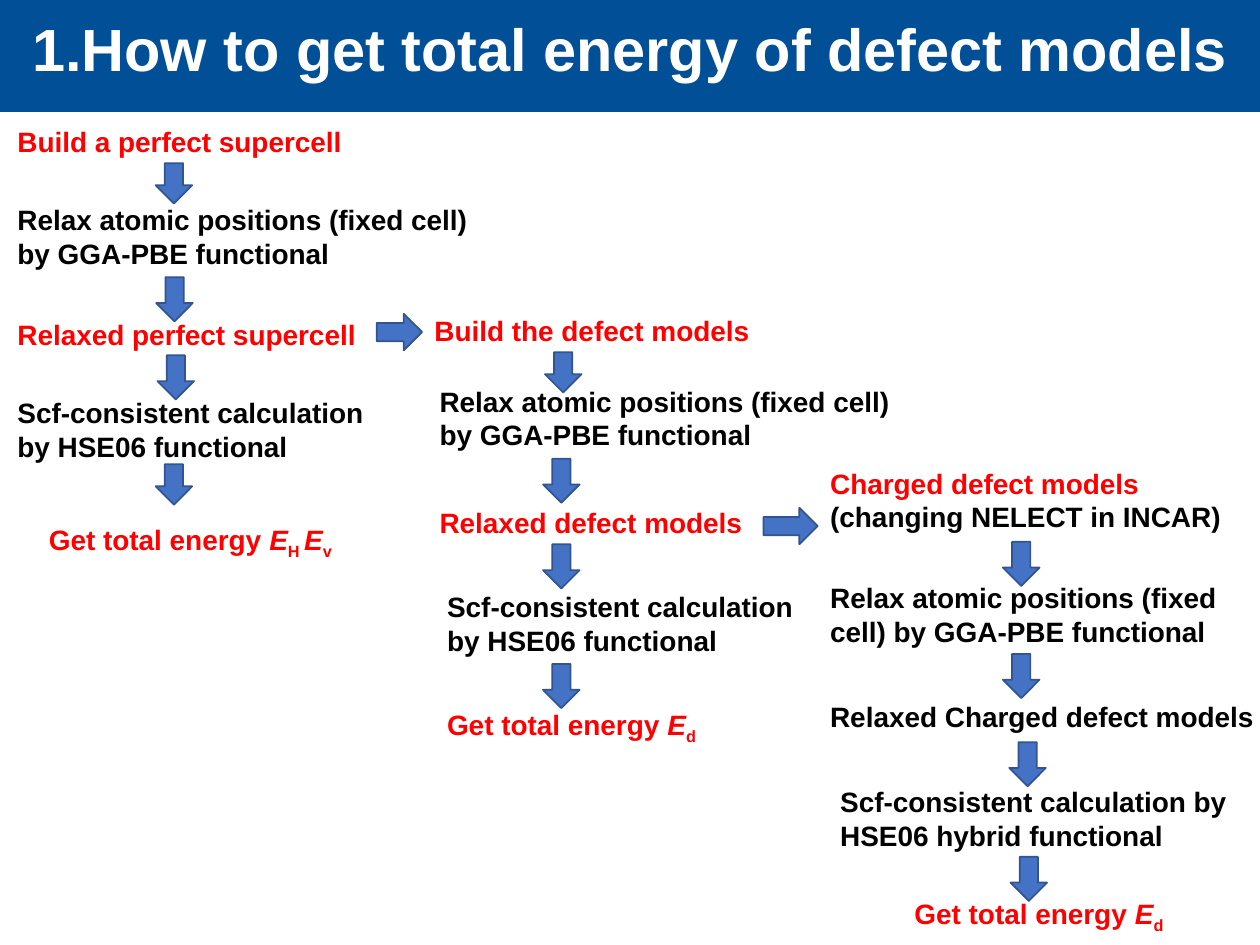
from dataclasses import dataclass

from pptx import Presentation
from pptx.dml.color import RGBColor
from pptx.enum.shapes import MSO_SHAPE as Shape
from pptx.enum.text import MSO_ANCHOR as Anchor, MSO_AUTO_SIZE as Fit, PP_ALIGN as Align
from pptx.util import Inches, Pt

WIDE, HIGH = Inches(10), Inches(7.5)
COL, ROW = WIDE / 100, HIGH / 75  # grid of 100 columns by 75 rows
FONT = "Arial"
RED, BLACK, WHITE = "FF0000", "000000", "FFFFFF"
NAVY, BLUE, EDGE = "014F97", "4472C4", "325491"
THICK = 2.9  # arrow thickness in rows


@dataclass(frozen=True)
class Run:
    text: str
    color: str = BLACK
    italic: bool = False
    sub: bool = False


@dataclass(frozen=True)
class Step:
    """A text block; each entry of paras is one paragraph of runs."""
    col: float
    row: float
    cols: float
    rows: float
    paras: tuple[tuple[Run, ...], ...]


@dataclass(frozen=True)
class Arrow:
    col: float
    row: float
    size: float
    down: bool = True


def plain(text: str, color: str = BLACK) -> tuple:
    return ((Run(text, color),),)


def energy(*marks: str) -> tuple:
    """One red paragraph with an italic E for each subscript."""
    runs = [Run("Get total energy ", RED)]
    for mark in marks:
        runs += [Run("E", RED, italic=True), Run(mark, RED, sub=True)]
    return (tuple(runs),)


RELAX = plain("Relax atomic positions (fixed cell) by GGA-PBE functional")
SCF = plain("Scf-consistent calculation by HSE06 functional")
HYBRID = plain("Scf-consistent calculation by HSE06 hybrid functional")
CHARGED = (plain("Charged defect models", RED)
           + plain("(changing NELECT in INCAR)"))
ONE, TWO = 3.7, 6.4  # block heights in rows

STEPS = (
    # Perfect supercell
    Step(0.4, 9.4, 52.9, ONE, plain("Build a perfect supercell", RED)),
    Step(0.4, 15.6, 39.2, TWO, RELAX),
    Step(0.4, 24.7, 29.5, ONE, plain("Relaxed perfect supercell", RED)),
    Step(0.4, 30.9, 31.9, TWO, SCF),
    Step(2.9, 41, 29.3, ONE, energy("H ", "v")),
    # Neutral defect
    Step(33.5, 24.4, 37.6, ONE, plain("Build the defect models", RED)),
    Step(33.9, 30, 38.8, TWO, RELAX),
    Step(33.9, 39.6, 27.8, ONE, plain("Relaxed defect models", RED)),
    Step(34.5, 46.3, 32.2, TWO, SCF),
    Step(34.5, 55.7, 34, ONE, energy("d")),
    # Charged defect
    Step(64.9, 36.5, 41.5, TWO, CHARGED),
    Step(64.9, 45.6, 36.5, TWO, RELAX),
    Step(64.9, 55, 44, ONE, plain("Relaxed Charged defect models")),
    Step(65.7, 61.8, 38, TWO, HYBRID),
    Step(71.6, 70.7, 34, ONE, energy("d")),
)

ARROWS = (
    Arrow(12.2, 13.1, 3.2), Arrow(12.1, 22.3, 3.5),
    Arrow(12.2, 28.5, 3.5), Arrow(12.2, 37, 3.2),
    Arrow(29.9, 24.9, 3.6, down=False),
    Arrow(43.1, 28.1, 3.2), Arrow(42.8, 36.7, 3.5),
    Arrow(42.8, 43.5, 3.5), Arrow(42.8, 53, 3.5),
    Arrow(60.6, 40.3, 4.3, down=False),
    Arrow(79.3, 43.3, 3.5), Arrow(79.3, 52.2, 3.5),
    Arrow(79.8, 59.2, 3.5), Arrow(79.9, 68.3, 3.5),
)


def rgb(code: str) -> RGBColor:
    return RGBColor.from_string(code)


def place(col: float, row: float, cols: float, rows: float) -> tuple:
    return round(col * COL), round(row * ROW), round(cols * COL), round(rows * ROW)


def paint(shape, fill: str, line: str, width: float) -> None:
    shape.fill.solid()
    shape.fill.fore_color.rgb = rgb(fill)
    shape.line.color.rgb = rgb(line)
    shape.line.width = Pt(width)


def add_run(para, item: Run, size: float) -> None:
    run = para.add_run()
    run.text = item.text
    font = run.font
    font.name, font.size, font.bold = FONT, Pt(size), True
    font.italic = item.italic
    font.color.rgb = rgb(item.color)
    if item.sub:
        run._r.get_or_add_rPr().set("baseline", "-25000")


def draw_title(slide, text: str) -> None:
    title = slide.shapes.title
    title.left, title.top, title.width, title.height = place(0, 0, 100, 8.7)
    paint(title, NAVY, NAVY, 3)
    frame = title.text_frame
    frame.auto_size = Fit.NONE
    frame.word_wrap = True
    frame.vertical_anchor = Anchor.MIDDLE
    para = frame.paragraphs[0]
    para.alignment = Align.CENTER
    para.line_spacing = 0.8
    add_run(para, Run(text, WHITE), 34)


def draw_step(slide, step: Step) -> None:
    box = slide.shapes.add_textbox(*place(step.col, step.row, step.cols, step.rows))
    frame = box.text_frame
    frame.word_wrap = True
    frame.auto_size = Fit.SHAPE_TO_FIT_TEXT
    for i, runs in enumerate(step.paras):
        para = frame.add_paragraph() if i else frame.paragraphs[0]
        for item in runs:
            add_run(para, item, 16)


def draw_arrow(slide, arrow: Arrow) -> None:
    shape = slide.shapes.add_shape(
        Shape.RIGHT_ARROW, *place(arrow.col, arrow.row, arrow.size, THICK))
    shape.rotation = 90 if arrow.down else 0
    shape.shadow.inherit = False
    paint(shape, BLUE, EDGE, 1)


def main() -> None:
    deck = Presentation()
    deck.slide_width, deck.slide_height = WIDE, HIGH
    slide = deck.slides.add_slide(deck.slide_layouts.get_by_name("Title Only"))
    draw_title(slide, "1.How to get total energy of defect models")
    for step in STEPS:
        draw_step(slide, step)
    for arrow in ARROWS:
        draw_arrow(slide, arrow)
    deck.save("out.pptx")


if __name__ == "__main__":
    main()
